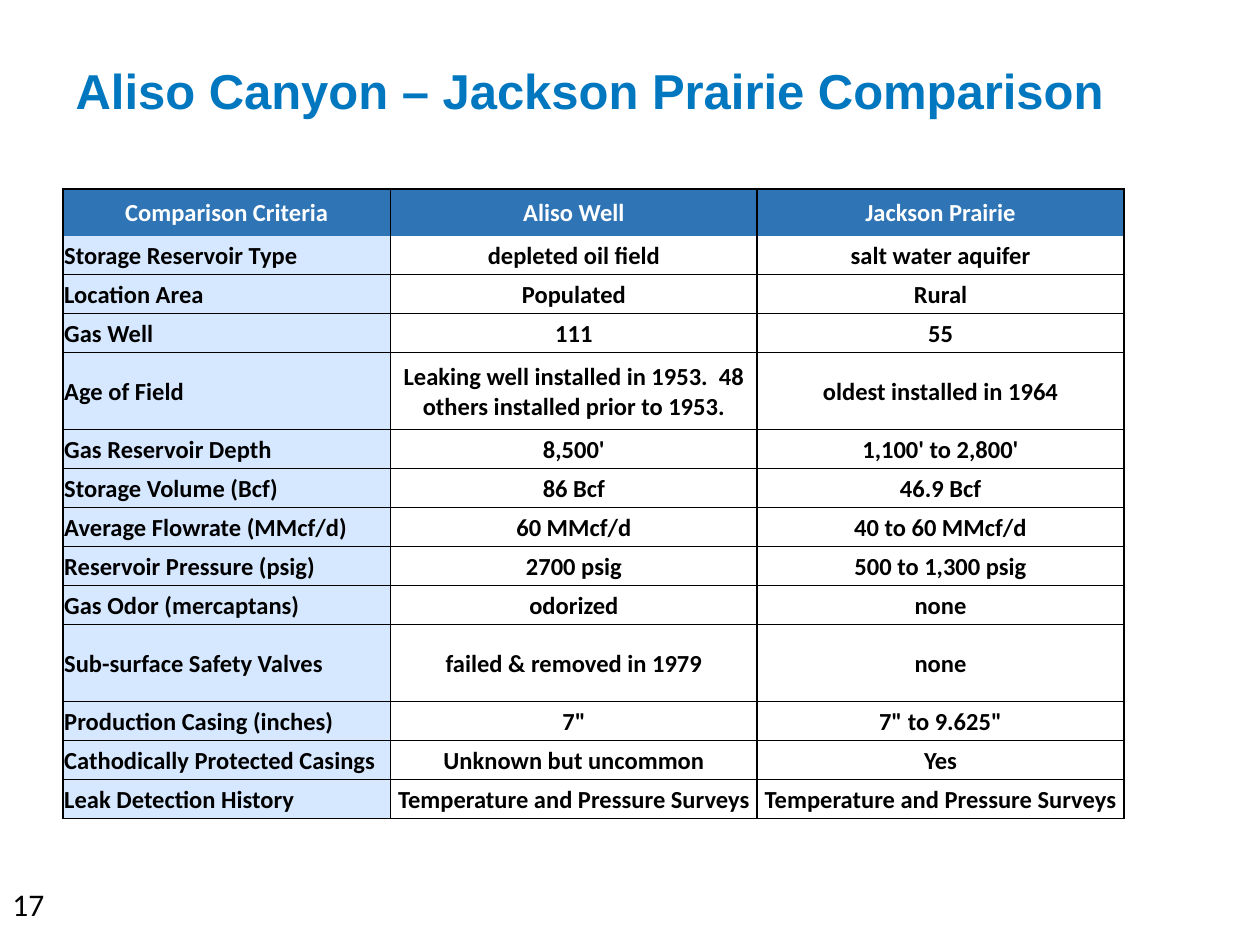
from dataclasses import dataclass

from lxml import etree
from pptx import Presentation
from pptx.dml.color import RGBColor
from pptx.enum.text import MSO_ANCHOR, PP_ALIGN
from pptx.oxml.ns import qn
from pptx.util import Inches, Pt

LEFT, CENTER = PP_ALIGN.LEFT, PP_ALIGN.CENTER
TOP, MIDDLE = MSO_ANCHOR.TOP, MSO_ANCHOR.MIDDLE
WIDTH, HEIGHT = Inches(10), Inches(7.5)


@dataclass(frozen=True)
class Theme:
    title_font: str = "Arial"
    body_font: str = "Calibri"
    title: str = "0077BE"
    header: str = "2F75B5"
    criteria: str = "D6E8FF"
    white: str = "FFFFFF"
    black: str = "000000"
    title_size: int = 28
    table_size: int = 14
    number_size: int = 18
    border: int = 1


@dataclass(frozen=True)
class Box:
    """Position and size as shares of the slide."""
    x: float
    y: float
    w: float
    h: float

    def emu(self) -> tuple[int, int, int, int]:
        return (int(self.x * WIDTH), int(self.y * HEIGHT),
                int(self.w * WIDTH), int(self.h * HEIGHT))


@dataclass(frozen=True)
class Row:
    criterion: str
    aliso: str
    jackson: str
    height: float = 0.31


THEME = Theme()
TITLE_BOX = Box(0.05, 0.01, 0.9, 0.17)
NUMBER_BOX = Box(0, 0.93, 0.06, 0.07)
TABLE_BOX = Box(0.05, 0.2, 0.84, 0.67)
COLUMN_WIDTHS = (2.6, 2.91, 2.91)
TALL = 0.61
ROWS = (
    Row("Comparison Criteria", "Aliso Well", "Jackson Prairie", 0.37),
    Row("Storage Reservoir Type", "depleted oil field", "salt water aquifer"),
    Row("Location Area", "Populated", "Rural"),
    Row("Gas Well", "111", "55"),
    Row("Age of Field", "Leaking well installed in 1953.  48 others installed prior to 1953.",
        "oldest installed in 1964", TALL),
    Row("Gas Reservoir Depth", "8,500'", "1,100' to 2,800'"),
    Row("Storage Volume (Bcf)", "86 Bcf", "46.9 Bcf"),
    Row("Average Flowrate (MMcf/d)", "60 MMcf/d", "40 to 60 MMcf/d"),
    Row("Reservoir Pressure (psig)", "2700 psig", "500 to 1,300 psig"),
    Row("Gas Odor (mercaptans)", "odorized", "none"),
    Row("Sub-surface Safety Valves", "failed & removed in 1979", "none", TALL),
    Row("Production Casing (inches)", '7"', '7" to 9.625"'),
    Row("Cathodically Protected Casings", "Unknown but uncommon", "Yes"),
    Row("Leak Detection History", "Temperature and Pressure Surveys",
        "Temperature and Pressure Surveys"),
)


def write(tf, text: str, font: str, size: int, color: str, bold: bool, align) -> None:
    tf.text = text
    p = tf.paragraphs[0]
    p.alignment = align
    p.font.name, p.font.size, p.font.bold = font, Pt(size), bold
    p.font.color.rgb = RGBColor.from_string(color)


def set_borders(cell, hidden: str) -> None:
    """Draw the four cell edges, except the hidden one."""
    tc_pr = cell._tc.get_or_add_tcPr()
    for side in ("L", "R", "T", "B"):
        ln = etree.SubElement(tc_pr, qn(f"a:ln{side}"), w=str(Pt(THEME.border)))
        if side == hidden:
            etree.SubElement(ln, qn("a:noFill"))
        else:
            fill = etree.SubElement(ln, qn("a:solidFill"))
            etree.SubElement(fill, qn("a:srgbClr"), val=THEME.black)


def draw_cell(cell, text: str, row: int, column: int) -> None:
    is_header, is_criterion = row == 0, column == 0
    cell.margin_left = cell.margin_right = cell.margin_top = Inches(0.01)
    cell.margin_bottom = 0
    cell.vertical_anchor = MIDDLE
    # No line separates the header from the first row of data.
    set_borders(cell, {0: "B", 1: "T"}.get(row, ""))
    color = THEME.header if is_header else THEME.criteria if is_criterion else THEME.white
    cell.fill.solid()
    cell.fill.fore_color.rgb = RGBColor.from_string(color)
    write(cell.text_frame, text, THEME.body_font, THEME.table_size,
          THEME.white if is_header else THEME.black, True,
          LEFT if is_criterion and not is_header else CENTER)


def draw_table(s) -> None:
    table = s.shapes.add_table(len(ROWS), len(COLUMN_WIDTHS), *TABLE_BOX.emu()).table
    table.first_row = table.horz_banding = False
    for column, width in zip(table.columns, COLUMN_WIDTHS):
        column.width = Inches(width)
    for i, row in enumerate(ROWS):
        table.rows[i].height = Inches(row.height)
        for j, text in enumerate((row.criterion, row.aliso, row.jackson)):
            draw_cell(table.cell(i, j), text, i, j)


def draw_title(s, text: str) -> None:
    sp = s.shapes.title
    sp.left, sp.top, sp.width, sp.height = TITLE_BOX.emu()
    sp.text_frame.vertical_anchor = MIDDLE
    write(sp.text_frame, text, THEME.title_font, THEME.title_size, THEME.title, True, LEFT)


def draw_page_number(s, number: str) -> None:
    tf = s.shapes.add_textbox(*NUMBER_BOX.emu()).text_frame
    tf.word_wrap = True
    tf.vertical_anchor = TOP
    write(tf, number, THEME.body_font, THEME.number_size, THEME.black, False, LEFT)


def main() -> None:
    prs = Presentation()
    prs.slide_width, prs.slide_height = WIDTH, HEIGHT
    s = prs.slides.add_slide(prs.slide_layouts[5])
    draw_title(s, "Aliso Canyon – Jackson Prairie Comparison")
    draw_page_number(s, "17")
    draw_table(s)
    prs.save("out.pptx")


if __name__ == "__main__":
    main()
